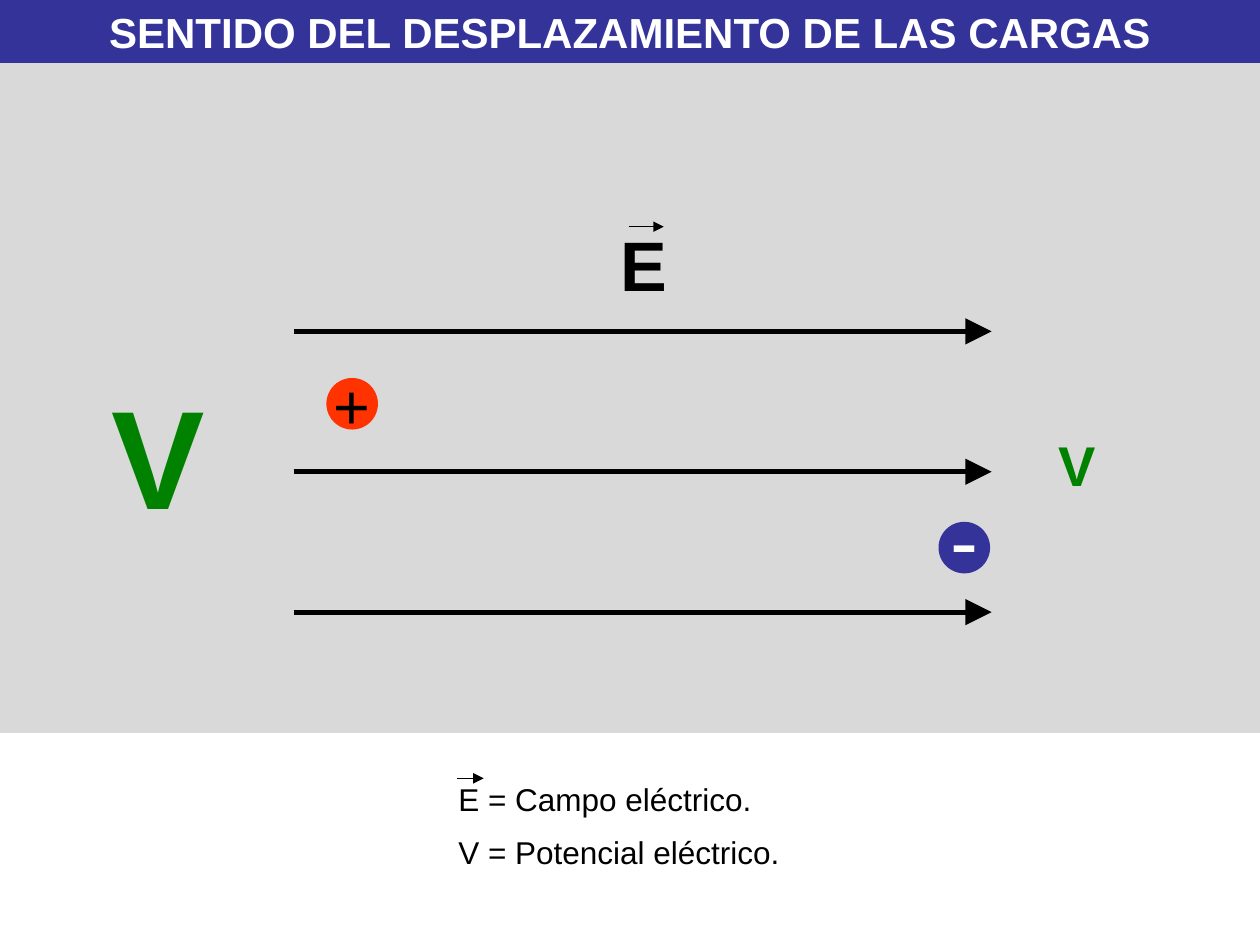
from lxml import etree
from pptx import Presentation
from pptx.dml.color import RGBColor
from pptx.enum import shapes, text
from pptx.oxml import ns
from pptx.util import Cm, Pt

COLORS = {
    "background": "D9D9D9",
    "blue": "333399",
    "red": "FF3300",
    "green": "008200",
    "black": "000000",
    "white": "FFFFFF",
}


def write(box, lines, size, color, bold=False, align=text.PP_ALIGN.LEFT):
    frame = box.text_frame
    frame.word_wrap = True
    frame.vertical_anchor = text.MSO_ANCHOR.TOP
    frame.text = "\n".join(lines)
    for index, para in enumerate(frame.paragraphs):
        para.alignment = align
        para.font.name = "Arial"
        para.font.size = Pt(size)
        para.font.bold = bold
        para.font.color.rgb = RGBColor.from_string(COLORS[color])
        if index:
            para.space_before = Pt(8.5)


def add_arrow(page, left, right, top, width, head):
    arrow = page.shapes.add_connector(
        shapes.MSO_CONNECTOR.STRAIGHT, Cm(left), Cm(top), Cm(right), Cm(top)
    )
    arrow.line.width = Pt(width)
    arrow.line.color.rgb = RGBColor.from_string(COLORS["black"])
    etree.SubElement(arrow.line._get_or_add_ln(), ns.qn("a:tailEnd"),
                     type="triangle", w=head, len=head)
    etree.SubElement(arrow._element.spPr, ns.qn("a:effectLst"))


deck = Presentation()
deck.slide_width, deck.slide_height = Cm(25.4), Cm(19.05)
page = deck.slides.add_slide(deck.slide_layouts[6])
page.background.fill.solid()
page.background.fill.fore_color.rgb = RGBColor.from_string(COLORS["background"])

rectangle, oval = shapes.MSO_SHAPE.RECTANGLE, shapes.MSO_SHAPE.OVAL
for kind, left, top, width, height, color, title in [
    (oval, 6.58, 7.62, 1.04, 1.04, "red", ""),
    (oval, 18.92, 10.52, 1.04, 1.04, "blue", ""),
    (rectangle, 0, 0, 25.4, 1.27, "blue", "SENTIDO DEL DESPLAZAMIENTO DE LAS CARGAS"),
    (rectangle, 0, 14.78, 25.4, 4.27, "white", ""),
]:
    shape = page.shapes.add_shape(kind, Cm(left), Cm(top), Cm(width), Cm(height))
    shape.shadow.inherit = False
    shape.fill.solid()
    shape.fill.fore_color.rgb = RGBColor.from_string(COLORS[color])
    shape.line.fill.background()
    if title:
        write(shape, [title], 24, "white", True, text.PP_ALIGN.CENTER)

for lines, left, top, width, height, size, color, bold in [
    (["+"], 6.48, 7.26, 1.24, 1.78, 36, "black", False),
    (["-"], 18.92, 9.7, 1.24, 2.29, 48, "white", False),
    (["V"], 2, 7.32, 3.05, 3.63, 80, "green", True),
    (["V"], 21.08, 8.56, 3.05, 1.6, 32, "green", True),
    (["E"], 12.26, 4.34, 1.68, 1.96, 40, "black", True),
    (["E = Campo eléctrico.", "V = Potencial eléctrico."],
     8.99, 15.6, 7.09, 2.16, 18, "black", False),
]:
    box = page.shapes.add_textbox(Cm(left), Cm(top), Cm(width), Cm(height))
    write(box, lines, size, color, bold)

for row in range(3):
    add_arrow(page, 5.92, 19.99, 6.68 + 2.83 * row, 3, "lg")
add_arrow(page, 12.67, 13.38, 4.57, 0.75, "med")
add_arrow(page, 9.22, 9.75, 15.69, 0.75, "med")

deck.save("out.pptx")
